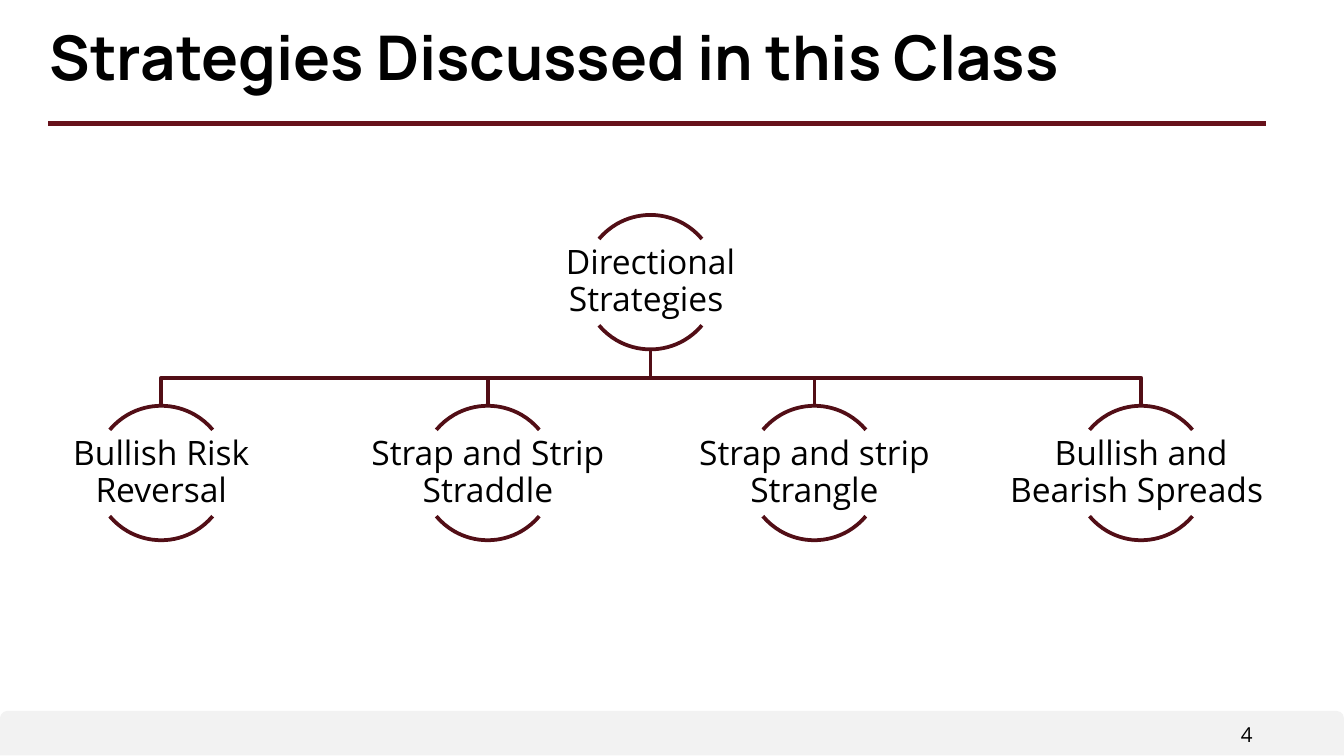
from lxml import etree
from pptx import Presentation
from pptx import util as u
from pptx.dml.color import RGBColor
from pptx.enum import shapes, text
from pptx.oxml.ns import qn

COLORS = {"ink": "000000", "rule": "67121B", "branch": "520E16", "footer": "F2F2F2"}
CIRCLE = 1
LABEL_WIDTH = 2.01
ROOT_CENTER, ROOT_TOP = 4.84, 1.6
CHILD_CENTER, CHILD_TOP, CHILD_STEP = 1.2, 3.02, 2.43
STRATEGIES = [
    "Bullish Risk Reversal",
    "Strap and Strip Straddle",
    "Strap and strip Strangle",
    "Bullish and Bearish Spreads ",
]


class Painter:
    body_font = "Open Sans"
    title_font = "Manrope"

    def __init__(self, page):
        self.page = page

    def color(self, name):
        return RGBColor.from_string(COLORS[name])

    def stroke(self, line, name, width):
        line.color.rgb = self.color(name)
        line.width = u.Pt(width)

    def label(self, words, left, top, width, height, size, font=None, bold=False,
              align=text.PP_ALIGN.LEFT, anchor=text.MSO_ANCHOR.TOP,
              margins=(0.07, 0.04), spacing=None):
        box = self.page.shapes.add_textbox(
            u.Inches(left), u.Inches(top), u.Inches(width), u.Inches(height))
        frame = box.text_frame
        frame.word_wrap = True
        frame.vertical_anchor = anchor
        frame.margin_left = frame.margin_right = u.Inches(margins[0])
        frame.margin_top = frame.margin_bottom = u.Inches(margins[1])
        frame.text = words
        para = frame.paragraphs[0]
        para.alignment = align
        para.line_spacing = spacing
        span = para.runs[0]
        span.font.name = font or self.body_font
        span.font.size = u.Pt(size)
        span.font.bold = bold
        span.font.color.rgb = self.color("ink")

    def footer(self, left, top, width, height):
        band = self.page.shapes.add_shape(
            shapes.MSO_SHAPE.ROUND_2_SAME_RECTANGLE,
            u.Inches(left), u.Inches(top), u.Inches(width), u.Inches(height))
        band.shadow.inherit = False
        band.fill.solid()
        band.fill.fore_color.rgb = self.color("footer")
        band.line.fill.background()

    def rule(self, left, right, y):
        line = self.page.shapes.add_connector(
            shapes.MSO_CONNECTOR.STRAIGHT,
            u.Inches(left), u.Inches(y), u.Inches(right), u.Inches(y))
        self.stroke(line.line, "rule", 2.5)
        etree.SubElement(line._element.spPr, qn("a:effectLst"))

    def branch(self, start_x, start_y, end_x, end_y):
        middle = (start_y + end_y) / 2
        points = [(start_x, middle), (end_x, middle), (end_x, end_y)]
        builder = self.page.shapes.build_freeform(u.Inches(start_x), u.Inches(start_y))
        builder.add_line_segments(
            [(u.Inches(x), u.Inches(y)) for x, y in points], close=False)
        elbow = builder.convert_to_shape()
        elbow.shadow.inherit = False
        elbow.fill.background()
        self.stroke(elbow.line, "branch", 2)

    def node(self, words, center, top):
        for start, end in ((132, 192), (24, 84)):
            arc = self.page.shapes.add_shape(
                shapes.MSO_SHAPE.ARC, u.Inches(center - CIRCLE / 2), u.Inches(top),
                u.Inches(CIRCLE), u.Inches(CIRCLE))
            arc.adjustments[0] = start
            arc.adjustments[1] = end
            arc.shadow.inherit = False
            arc.fill.background()
            self.stroke(arc.line, "branch", 2)
        self.label(words, center - LABEL_WIDTH / 2, top + 0.18, LABEL_WIDTH, 0.64, 18,
                   align=text.PP_ALIGN.CENTER, anchor=text.MSO_ANCHOR.MIDDLE,
                   margins=(0.01, 0.01), spacing=0.9)


def main():
    deck = Presentation()
    deck.slide_width = u.Inches(10)
    deck.slide_height = deck.slide_width * 9 // 16
    painter = Painter(deck.slides.add_slide(deck.slide_layouts[6]))

    painter.footer(0, 5.29, 10, 0.33)
    painter.label("4", 8.12, 5.33, 1.27, 0.25, 11, align=text.PP_ALIGN.RIGHT)
    painter.rule(0.36, 9.42, 0.92)
    painter.label("Strategies Discussed in this Class", 0.3, 0.16, 9.31, 0.68, 33,
                  font=painter.title_font, bold=True, spacing=0.9)

    centers = [CHILD_CENTER + CHILD_STEP * index for index in range(len(STRATEGIES))]
    for center in centers:
        painter.branch(ROOT_CENTER, ROOT_TOP + CIRCLE, center, CHILD_TOP)
    painter.node("Directional Strategies ", ROOT_CENTER, ROOT_TOP)
    for words, center in zip(STRATEGIES, centers):
        painter.node(words, center, CHILD_TOP)

    deck.save("out.pptx")


if __name__ == "__main__":
    main()
